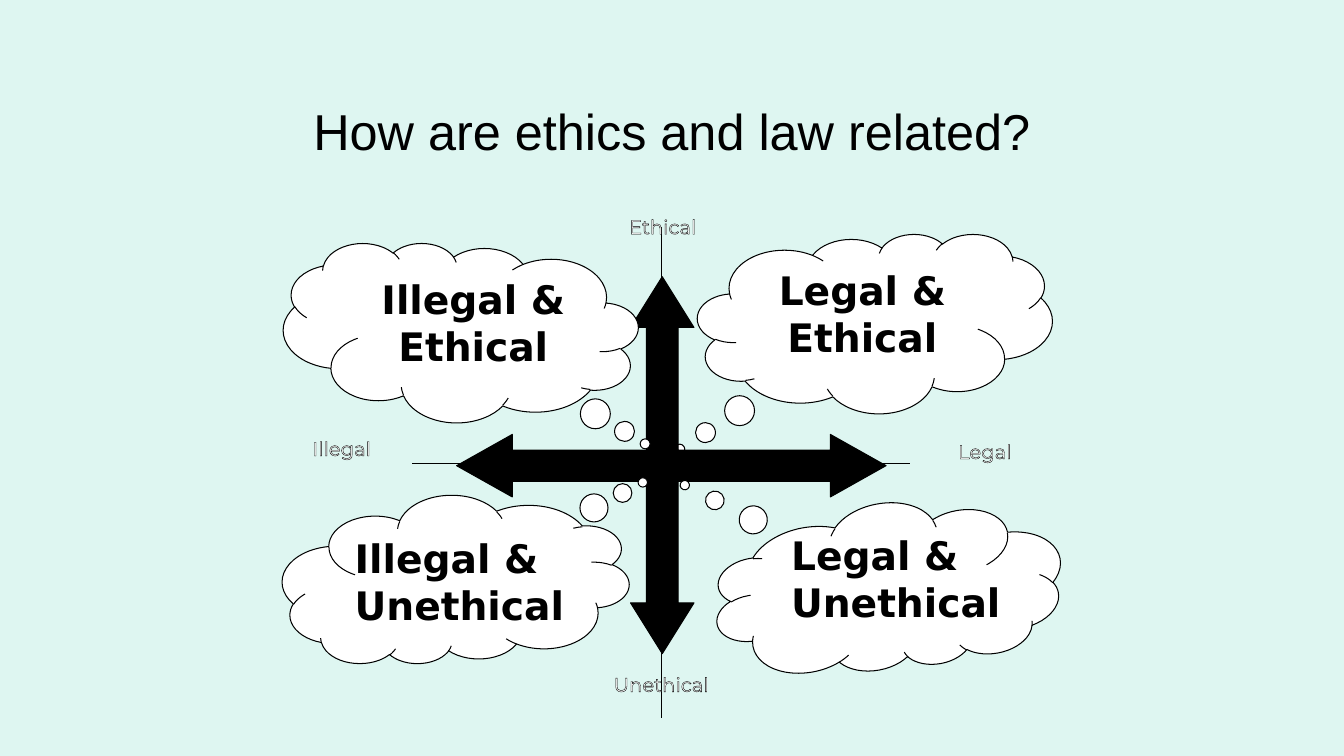
import pptx
import pptx.util
import pptx.dml.color
import pptx.enum.shapes
import pptx.enum.text
import pptx.oxml.ns
from lxml import etree

SHAPES = pptx.enum.shapes.MSO_SHAPE
ALIGN = pptx.enum.text.PP_ALIGN
ANCHOR = pptx.enum.text.MSO_ANCHOR
COLORS = {"background": "DEF6F1", "ink": "000000", "paper": "FFFFFF"}
COLUMNS, ROWS = 40, 30


def color(name):
    return pptx.dml.color.RGBColor.from_string(COLORS[name])


class Diagram:
    heading_font = "Arial"
    cloud_font = "DejaVu Sans"
    caption_font = "Montserrat"
    line_width = pptx.util.Pt(0.75)

    def __init__(self, presentation):
        self.column = presentation.slide_width / COLUMNS
        self.row = presentation.slide_height / ROWS
        self.slide = presentation.slides.add_slide(presentation.slide_layouts[5])
        self.slide.background.fill.solid()
        self.slide.background.fill.fore_color.rgb = color("background")

    def place(self, left, top, width, height):
        return (round(left * self.column), round(top * self.row),
                round(width * self.column), round(height * self.row))

    def set_text(self, shape, text, font, size, ink="ink", bold=False,
                 align=ALIGN.CENTER, anchor=ANCHOR.TOP, wrap=True):
        frame = shape.text_frame
        frame.text = text
        frame.word_wrap = wrap
        frame.vertical_anchor = anchor
        paragraph = frame.paragraphs[0]
        paragraph.alignment = align
        run = paragraph.runs[0]
        run.font.name = font
        run.font.size = pptx.util.Pt(size)
        run.font.bold = bold
        run.font.color.rgb = color(ink)
        return run

    def title(self, text, box):
        shape = self.slide.shapes.title
        shape.left, shape.top, shape.width, shape.height = self.place(*box)
        self.set_text(shape, text, self.heading_font, 36, anchor=ANCHOR.MIDDLE)

    def shape(self, kind, box, fill, adjustments=(), rotation=0):
        shape = self.slide.shapes.add_shape(kind, *self.place(*box))
        shape.shadow.inherit = False
        shape.fill.solid()
        shape.fill.fore_color.rgb = color(fill)
        shape.line.color.rgb = color("ink")
        shape.line.width = self.line_width
        shape.rotation = rotation
        for index, value in enumerate(adjustments):
            shape.adjustments[index] = value
        return shape

    def cloud(self, box, tail, flips=(), rotation=0, text=None):
        shape = self.shape(SHAPES.CLOUD_CALLOUT, box, "paper", tail, rotation)
        for flip in flips:
            shape._element.spPr.find(pptx.oxml.ns.qn("a:xfrm")).set(flip, "1")
        if text:
            self.set_text(shape, text, self.cloud_font, 28, bold=True)

    def arrow(self, box, head, rotation):
        self.shape(SHAPES.RIGHT_ARROW, box, "ink", (0.5, head), rotation)

    def axis(self, start_column, start_row, end_column, end_row):
        start = self.place(start_column, start_row, 0, 0)[:2]
        end = self.place(end_column, end_row, 0, 0)[:2]
        line = self.slide.shapes.add_connector(
            pptx.enum.shapes.MSO_CONNECTOR.STRAIGHT, *start, *end)
        line.line.color.rgb = color("ink")
        line.line.width = self.line_width
        etree.SubElement(line._element.spPr, pptx.oxml.ns.qn("a:effectLst"))

    def caption(self, text, left, top, width):
        shape = self.slide.shapes.add_textbox(*self.place(left, top, width, 2.08))
        run = self.set_text(shape, text, self.caption_font, 14, "paper", wrap=False)
        qn = pptx.oxml.ns.qn
        outline = etree.Element(qn("a:ln"), w=str(int(self.line_width)))
        fill = etree.SubElement(outline, qn("a:solidFill"))
        etree.SubElement(fill, qn("a:srgbClr"), val=COLORS["ink"])
        run._r.get_or_add_rPr().insert(0, outline)

    def label(self, text, box):
        shape = self.slide.shapes.add_textbox(*self.place(*box))
        self.set_text(shape, text, self.cloud_font, 28, bold=True, align=ALIGN.LEFT)


def main():
    presentation = pptx.Presentation()
    presentation.slide_width = pptx.util.Inches(13.33)
    presentation.slide_height = pptx.util.Inches(7.5)
    diagram = Diagram(presentation)

    diagram.title("How are ethics and law related?", (3, 2.68, 34, 5))
    diagram.cloud((20.76, 9.28, 10.56, 7.12), (-0.55, 0.7), text="Legal & Ethical")

    diagram.axis(12.27, 18.4, 27.09, 18.4)
    diagram.axis(19.68, 28.48, 19.68, 9)
    for text, left, top, width in (
        ("Unethical", 16.71, 26.48, 5.94),
        ("Ethical", 17.58, 8.32, 4.29),
        ("Legal", 27.6, 17.24, 3.42),
        ("Illegal", 8.28, 17.12, 3.78),
    ):
        diagram.caption(text, left, top, width)

    for left, rotation in ((19.77, 0), (13.59, 180)):
        diagram.arrow((left, 17.24, 6.6, 2.48), 0.89, rotation)
    for top, rotation in ((20.64, 90), (13.76, 270)):
        diagram.arrow((16.68, top, 6.06, 2.52), 0.8, rotation)
    diagram.shape(SHAPES.RECTANGLE, (19.11, 17.96, 1.11, 1.08), "ink")

    diagram.cloud((8.4, 19.68, 10.32, 6.68), (-0.54, 0.58), ("flipH", "flipV"))
    diagram.cloud((21.24, 20, 10.38, 6.68), (-0.52, 0.82), ("flipH",), 169.6)
    diagram.cloud((8.43, 9.64, 10.56, 7.12), (-0.52, 0.62), ("flipH",),
                  text="Illegal & Ethical")
    diagram.label("Illegal & Unethical", (10.26, 21, 6.99, 4.12))
    diagram.label("Legal & Unethical", (23.25, 20.88, 7.74, 4.12))

    presentation.save("out.pptx")


if __name__ == "__main__":
    main()
